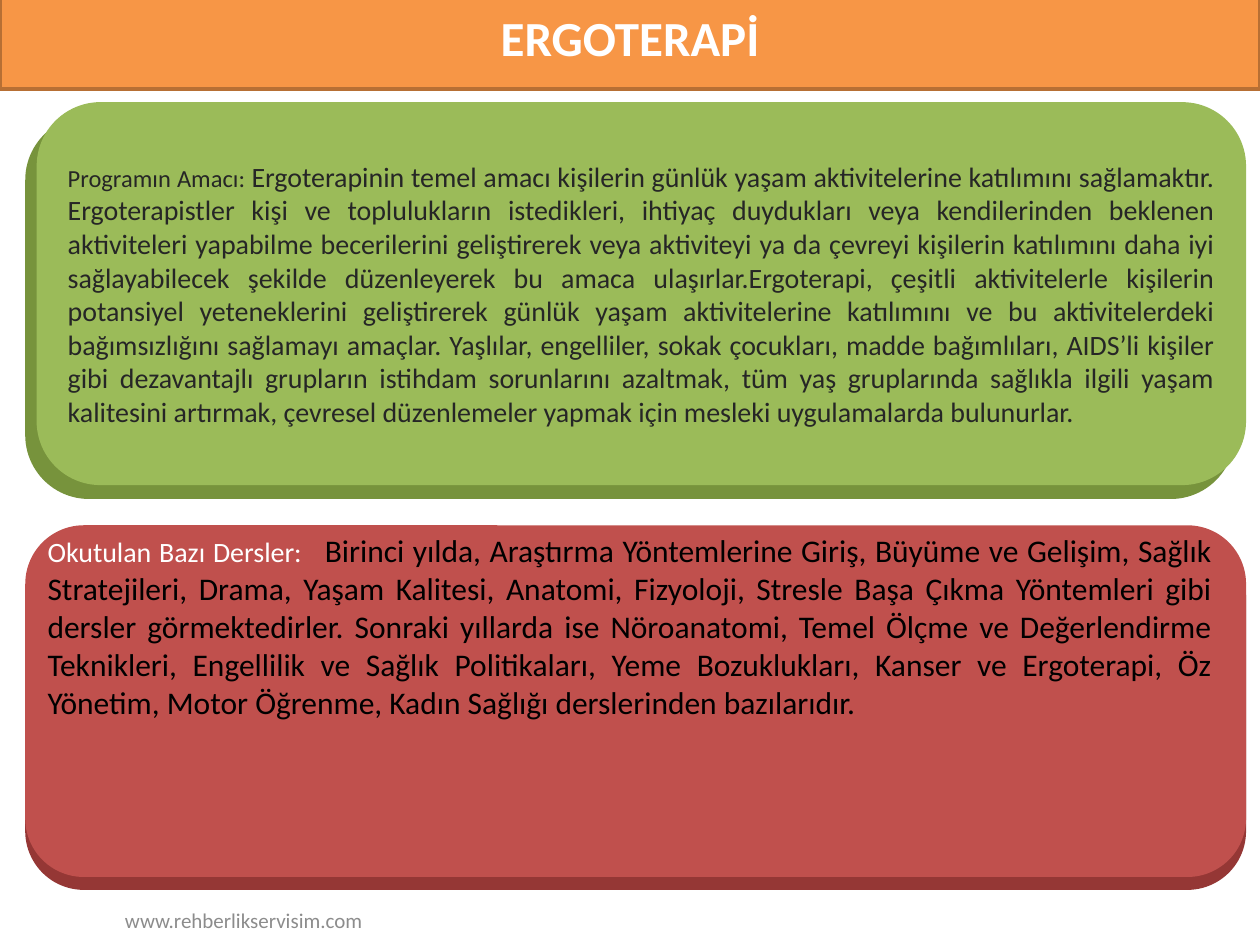
from dataclasses import dataclass

from pptx import Presentation
from pptx.dml.color import RGBColor
from pptx.enum.shapes import MSO_SHAPE
from pptx.enum.text import MSO_ANCHOR, PP_ALIGN
from pptx.shapes.autoshape import Shape
from pptx.slide import Slide
from pptx.util import Cm, Pt

FONT = "Calibri"
WHITE = RGBColor(0xFF, 0xFF, 0xFF)
BLACK = RGBColor(0x00, 0x00, 0x00)
INK = RGBColor(0x26, 0x26, 0x26)
GRAY = RGBColor(0x8C, 0x8C, 0x8C)
ORANGE = RGBColor(0xF7, 0x96, 0x46)
RUST = RGBColor(0xB7, 0x6F, 0x34)
GREEN = RGBColor(0x9B, 0xBB, 0x59)
MOSS = RGBColor(0x77, 0x93, 0x3C)
RED = RGBColor(0xC0, 0x50, 0x4D)
WINE = RGBColor(0x95, 0x37, 0x35)

AIM = (
    "Ergoterapinin temel amacı kişilerin günlük yaşam aktivitelerine katılımını sağlamaktır. "
    "Ergoterapistler kişi ve toplulukların istedikleri, ihtiyaç duydukları veya kendilerinden "
    "beklenen aktiviteleri yapabilme becerilerini geliştirerek veya aktiviteyi ya da çevreyi "
    "kişilerin katılımını daha iyi sağlayabilecek şekilde düzenleyerek bu amaca ulaşırlar."
    "Ergoterapi, çeşitli aktivitelerle kişilerin potansiyel yeteneklerini geliştirerek günlük "
    "yaşam aktivitelerine katılımını ve bu aktivitelerdeki bağımsızlığını sağlamayı amaçlar. "
    "Yaşlılar, engelliler, sokak çocukları, madde bağımlıları, AIDS’li kişiler gibi "
    "dezavantajlı grupların istihdam sorunlarını azaltmak, tüm yaş gruplarında sağlıkla ilgili "
    "yaşam kalitesini artırmak, çevresel düzenlemeler yapmak için mesleki uygulamalarda "
    "bulunurlar."
)
COURSES = (
    " Birinci yılda, Araştırma Yöntemlerine Giriş, Büyüme ve Gelişim, Sağlık Stratejileri, "
    "Drama, Yaşam Kalitesi, Anatomi, Fizyoloji, Stresle Başa Çıkma Yöntemleri gibi dersler "
    "görmektedirler. Sonraki yıllarda ise Nöroanatomi, Temel Ölçme ve Değerlendirme "
    "Teknikleri, Engellilik ve Sağlık Politikaları, Yeme Bozuklukları, Kanser ve Ergoterapi, "
    "Öz Yönetim, Motor Öğrenme, Kadın Sağlığı derslerinden bazılarıdır."
)


@dataclass(frozen=True)
class Box:
    left: float
    top: float
    width: float
    height: float

    def place(self) -> tuple[Cm, Cm, Cm, Cm]:
        return Cm(self.left), Cm(self.top), Cm(self.width), Cm(self.height)


@dataclass(frozen=True)
class Part:
    text: str
    size: int
    color: RGBColor
    bold: bool = False


def add_block(slide: Slide, kind: MSO_SHAPE, box: Box, fill: RGBColor) -> Shape:
    shape = slide.shapes.add_shape(kind, *box.place())
    shape.shadow.inherit = False
    shape.fill.solid()
    shape.fill.fore_color.rgb = fill
    shape.line.fill.background()
    return shape


def add_panel(slide: Slide, back: Box, dark: RGBColor, front: Box, light: RGBColor) -> Shape:
    add_block(slide, MSO_SHAPE.ROUNDED_RECTANGLE, back, dark)
    return add_block(slide, MSO_SHAPE.ROUNDED_RECTANGLE, front, light)


def write(shape: Shape, parts: list[Part], align: PP_ALIGN, anchor: MSO_ANCHOR) -> None:
    frame = shape.text_frame
    frame.word_wrap = True
    frame.vertical_anchor = anchor
    line = frame.paragraphs[0]
    line.alignment = align
    for part in parts:
        run = line.add_run()
        run.text = part.text
        run.font.name = FONT
        run.font.size = Pt(part.size)
        run.font.bold = part.bold
        run.font.color.rgb = part.color


def main() -> None:
    """Build the slide on occupational therapy and save it."""
    deck = Presentation()
    deck.slide_width, deck.slide_height = Cm(25.4), Cm(19.05)
    slide = deck.slides.add_slide(deck.slide_layouts[6])

    title = add_block(slide, MSO_SHAPE.RECTANGLE, Box(0, -0.33, 25.4, 2.13), ORANGE)
    title.line.color.rgb = RUST
    title.line.width = Pt(2)
    write(title, [Part("ERGOTERAPİ", 28, WHITE, True)], PP_ALIGN.CENTER, MSO_ANCHOR.MIDDLE)

    aim = add_panel(slide, Box(0.51, 2.34, 24.38, 7.72), MOSS,
                    Box(0.74, 2.06, 24.38, 7.72), GREEN)
    write(aim, [Part("Programın Amacı: ", 14, INK), Part(AIM, 16, INK)],
          PP_ALIGN.JUSTIFY, MSO_ANCHOR.MIDDLE)

    site = slide.shapes.add_textbox(*Box(0.89, 18.06, 8.05, 0.99).place())
    write(site, [Part("www.rehberlikservisim.com", 12, GRAY)],
          PP_ALIGN.CENTER, MSO_ANCHOR.MIDDLE)

    add_panel(slide, Box(0.51, 10.85, 24.61, 7.09), WINE,
              Box(0.51, 10.59, 24.61, 7.09), RED)
    courses = slide.shapes.add_textbox(*Box(0.71, 10.59, 23.98, 4.11).place())
    write(courses, [Part("Okutulan Bazı Dersler:", 16, WHITE), Part("  ", 14, WHITE),
                    Part(COURSES, 18, BLACK)], PP_ALIGN.JUSTIFY, MSO_ANCHOR.TOP)

    deck.save("out.pptx")


if __name__ == "__main__":
    main()
